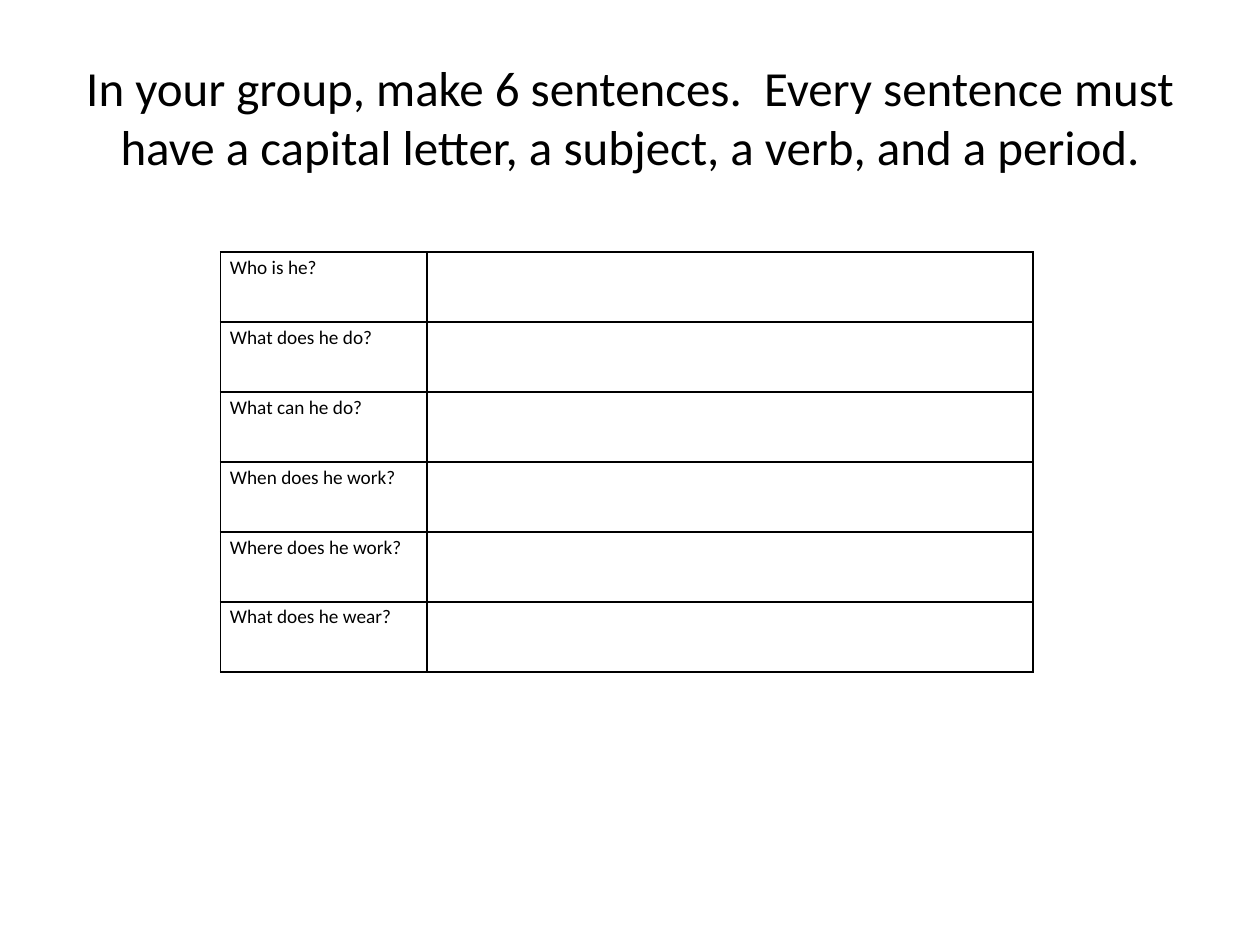
from dataclasses import dataclass

from lxml.etree import SubElement
from pptx import Presentation
from pptx.dml.color import RGBColor
from pptx.enum.text import MSO_ANCHOR, PP_ALIGN
from pptx.oxml.ns import qn
from pptx.slide import Slide
from pptx.table import _Cell
from pptx.text.text import _Paragraph
from pptx.util import Pt

COLORS = {"ink": "000000", "paper": "FFFFFF"}
FONT = "Calibri"
COLUMN_WIDTHS = (118, 346.4)
ROW_HEIGHT = 40


@dataclass
class Question:
    text: str
    answer: str = ""


QUESTIONS = [
    Question("Who is he?"),
    Question("What does he do?"),
    Question("What can he do?"),
    Question("When does he work?"),
    Question("Where does he work?"),
    Question("What does he wear?"),
]


def add_text(paragraph: _Paragraph, text: str, size: float) -> None:
    run = paragraph.add_run()
    run.text = text
    run.font.name = FONT
    run.font.size = Pt(size)
    run.font.color.rgb = RGBColor.from_string(COLORS["ink"])


def add_borders(cell: _Cell) -> None:
    properties = cell._tc.get_or_add_tcPr()
    for position, edge in enumerate(("a:lnL", "a:lnR", "a:lnT", "a:lnB")):
        line = SubElement(properties, qn(edge), w=str(Pt(1)))
        fill = SubElement(line, qn("a:solidFill"))
        SubElement(fill, qn("a:srgbClr"), val=COLORS["ink"])
        properties.insert(position, line)


def format_cell(cell: _Cell, text: str) -> None:
    cell.margin_left = cell.margin_right = Pt(5.4)
    cell.margin_top = cell.margin_bottom = Pt(0)
    cell.fill.background()
    add_borders(cell)
    paragraph = cell.text_frame.paragraphs[0]
    paragraph.line_spacing = 1.15
    if text:
        add_text(paragraph, text, 11)
    else:
        paragraph.font.size = Pt(11)


def add_instruction(slide: Slide, text: str) -> None:
    instruction = slide.shapes.title
    instruction.left, instruction.top = Pt(36), Pt(21.6)
    instruction.width, instruction.height = Pt(648), Pt(90)
    frame = instruction.text_frame
    frame.vertical_anchor = MSO_ANCHOR.MIDDLE
    frame.paragraphs[0].alignment = PP_ALIGN.CENTER
    add_text(frame.paragraphs[0], text, 28)


def add_worksheet(slide: Slide, questions: list[Question]) -> None:
    worksheet = slide.shapes.add_table(
        len(questions), len(COLUMN_WIDTHS), Pt(126), Pt(144),
        Pt(sum(COLUMN_WIDTHS)), Pt(ROW_HEIGHT * len(questions)),
    ).table
    worksheet.first_row = False
    worksheet.horz_banding = False
    for column, width in zip(worksheet.columns, COLUMN_WIDTHS):
        column.width = Pt(width)
    for row, question in zip(worksheet.rows, questions):
        row.height = Pt(ROW_HEIGHT)
        for cell, text in zip(row.cells, (question.text, question.answer)):
            format_cell(cell, text)


def main() -> None:
    presentation = Presentation()
    presentation.slide_width, presentation.slide_height = Pt(720), Pt(540)
    slide = presentation.slides.add_slide(presentation.slide_layouts[5])
    slide.background.fill.solid()
    slide.background.fill.fore_color.rgb = RGBColor.from_string(COLORS["paper"])
    add_instruction(
        slide,
        "In your group, make 6 sentences.  Every sentence must have "
        "a capital letter, a subject, a verb, and a period.",
    )
    add_worksheet(slide, QUESTIONS)
    presentation.save("out.pptx")


if __name__ == "__main__":
    main()
